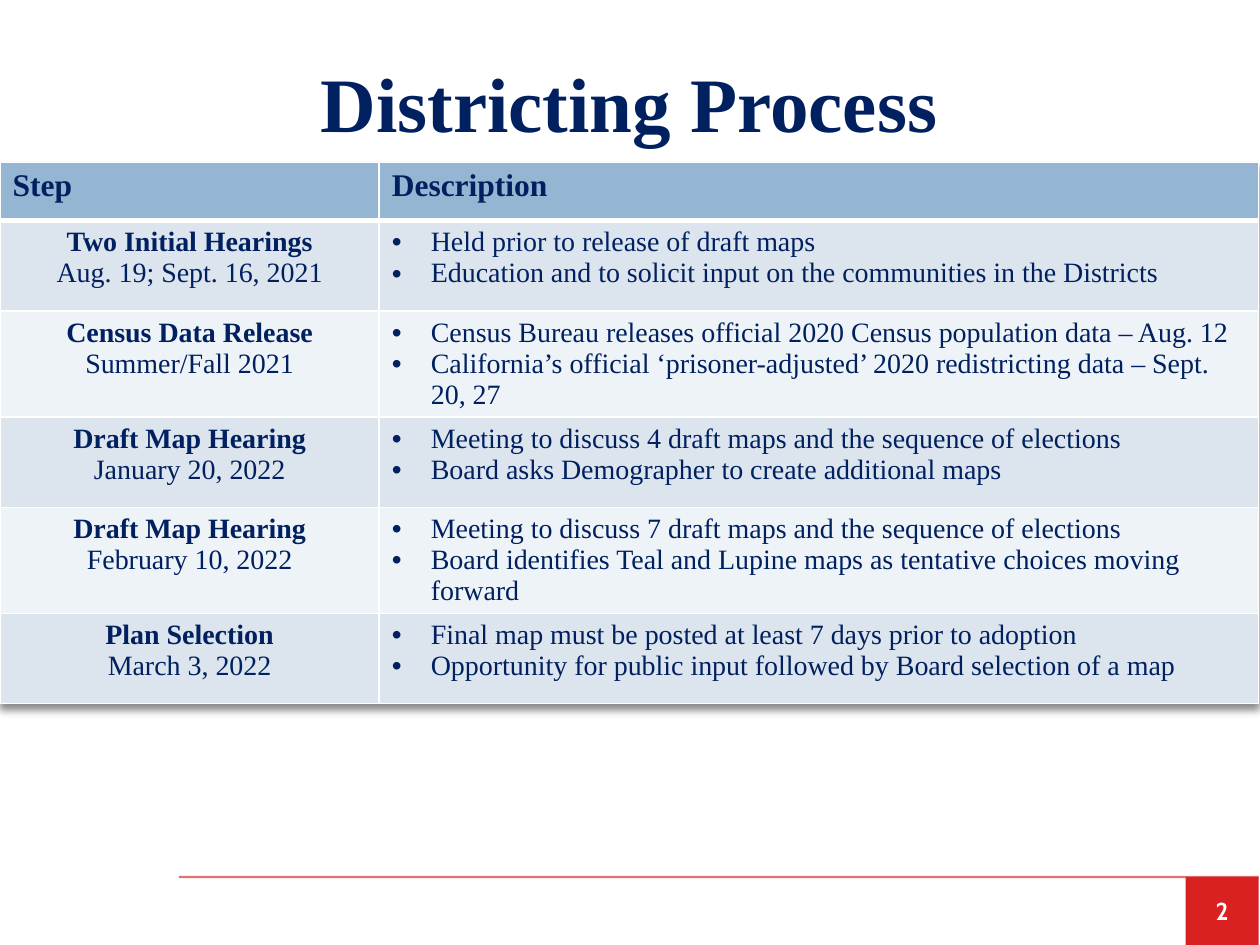
from dataclasses import dataclass

from lxml.etree import SubElement
from pptx import Presentation
from pptx.dml.color import RGBColor
from pptx.enum.shapes import MSO_CONNECTOR, MSO_SHAPE
from pptx.enum.text import MSO_ANCHOR, PP_ALIGN
from pptx.oxml import parse_xml
from pptx.oxml.ns import nsdecls, qn
from pptx.util import Inches, Pt


@dataclass(frozen=True)
class Theme:
    navy: str = "002060"
    white: str = "FFFFFF"
    red: str = "D92121"
    rule: str = "C80000"
    header: str = "94B6D2"
    bands: tuple = ("DCE5EE", "EEF3F7")
    serif: str = "Times New Roman"
    sans: str = "Cabin"
    title_size: int = 44
    header_size: int = 18
    body_size: int = 16
    number_size: int = 14


THEME = Theme()

HEADINGS = ("Step", "Description")
STEPS = [
    ("Two Initial Hearings", "Aug. 19; Sept. 16, 2021",
     ["Held prior to release of draft maps",
      "Education and to solicit input on the communities in the Districts"]),
    ("Census Data Release", "Summer/Fall 2021",
     ["Census Bureau releases official 2020 Census population data – Aug. 12",
      "California’s official ‘prisoner-adjusted’ 2020 redistricting data – Sept. 20, 27"]),
    ("Draft Map Hearing", "January 20, 2022",
     ["Meeting to discuss 4 draft maps and the sequence of elections",
      "Board asks Demographer to create additional maps"]),
    ("Draft Map Hearing", "February 10, 2022",
     ["Meeting to discuss 7 draft maps and the sequence of elections",
      "Board identifies Teal and Lupine maps as tentative choices moving forward"]),
    ("Plan Selection", "March 3, 2022",
     ["Final map must be posted at least 7 days prior to adoption",
      "Opportunity for public input followed by Board selection of a map"]),
]


def style(paragraph, size, bold=False, color=THEME.navy, face=THEME.serif, align=None):
    font = paragraph.font
    font.name, font.size, font.bold = face, Pt(size), bold
    font.color.rgb = RGBColor.from_string(color)
    paragraph.alignment = align


def add_bullet(paragraph):
    properties = paragraph._p.get_or_add_pPr()
    properties.set("marL", str(Inches(0.31)))
    properties.set("indent", str(-Inches(0.31)))
    SubElement(properties, qn("a:buFont"), typeface="Arial")
    SubElement(properties, qn("a:buChar"), char="•")


def dress_cell(cell, color, top=1, bottom=1):
    properties = cell._tc.get_or_add_tcPr()
    for side, width in zip("LRTB", (1, 1, top, bottom)):
        border = SubElement(properties, qn(f"a:ln{side}"), w=str(Pt(width)))
        fill = SubElement(border, qn("a:solidFill"))
        SubElement(fill, qn("a:srgbClr"), val=THEME.white)
    cell.fill.solid()
    cell.fill.fore_color.rgb = RGBColor.from_string(color)


def place_title(slide, left, top, width, height):
    title = slide.shapes.title
    title.left, title.top, title.width, title.height = left, top, width, height
    frame = title.text_frame
    frame.text = "Districting Process"
    frame.vertical_anchor = MSO_ANCHOR.MIDDLE
    style(frame.paragraphs[0], THEME.title_size, True, align=PP_ALIGN.CENTER)


def place_steps(slide, left, top, width, height):
    header_height = Inches(0.46)
    step_width = Inches(3.01)
    table = slide.shapes.add_table(len(STEPS) + 1, 2, left, top, width, height).table
    table.columns[0].width = step_width
    table.columns[1].width = width - step_width
    table._tbl.tblPr.insert(0, parse_xml(
        f'<a:effectLst {nsdecls("a")}><a:outerShdw blurRad="50800" dist="38100" '
        'dir="5400000" rotWithShape="0"><a:srgbClr val="000000">'
        '<a:alpha val="45000"/></a:srgbClr></a:outerShdw></a:effectLst>'))

    table.rows[0].height = header_height
    for column, heading in enumerate(HEADINGS):
        cell = table.cell(0, column)
        cell.text = heading
        dress_cell(cell, THEME.header, bottom=3)
        style(cell.text_frame.paragraphs[0], THEME.header_size, True)

    for row, (step, date, details) in enumerate(STEPS, 1):
        table.rows[row].height = (height - header_height) // len(STEPS)
        step_cell, detail_cell = table.cell(row, 0), table.cell(row, 1)
        for cell in (step_cell, detail_cell):
            dress_cell(cell, THEME.bands[(row - 1) % 2], top=3 if row == 1 else 1)
        step_cell.text = f"{step}\n{date}"
        detail_cell.text = "\n".join(details)
        for paragraph, bold in zip(step_cell.text_frame.paragraphs, (True, False)):
            style(paragraph, THEME.body_size, bold, align=PP_ALIGN.CENTER)
        for paragraph in detail_cell.text_frame.paragraphs:
            add_bullet(paragraph)
            style(paragraph, THEME.body_size)


def place_footer(slide, left, top, width, height):
    right = left + width
    rule = slide.shapes.add_connector(MSO_CONNECTOR.STRAIGHT, left, top, right, top)
    rule.line.width = Pt(1.25)
    rule.line.color.rgb = RGBColor.from_string(THEME.rule)
    tint = rule._element.spPr.find(".//" + qn("a:srgbClr"))
    SubElement(tint, qn("a:alpha"), val="55000")
    SubElement(rule._element.spPr, qn("a:effectLst"))

    badge_width = Inches(0.58)
    badge = slide.shapes.add_shape(
        MSO_SHAPE.RECTANGLE, right - badge_width, top, badge_width, height)
    badge.shadow.inherit = False
    badge.fill.solid()
    badge.fill.fore_color.rgb = RGBColor.from_string(THEME.red)
    badge.line.fill.background()
    frame = badge.text_frame
    frame.text = "2"
    frame.vertical_anchor = MSO_ANCHOR.MIDDLE
    style(frame.paragraphs[0], THEME.number_size, True, THEME.white, THEME.sans,
          PP_ALIGN.CENTER)


def main():
    deck = Presentation()
    deck.slide_width, deck.slide_height = Inches(10), Inches(7.5)
    slide = deck.slides.add_slide(deck.slide_layouts[5])
    place_footer(slide, Inches(1.42), Inches(6.96), Inches(8.57), Inches(0.54))
    place_title(slide, Inches(0.37), Inches(0.27), Inches(9.25), Inches(1.08))
    place_steps(slide, Inches(0), Inches(1.29), Inches(9.99), Inches(4.05))
    deck.save("out.pptx")


if __name__ == "__main__":
    main()
